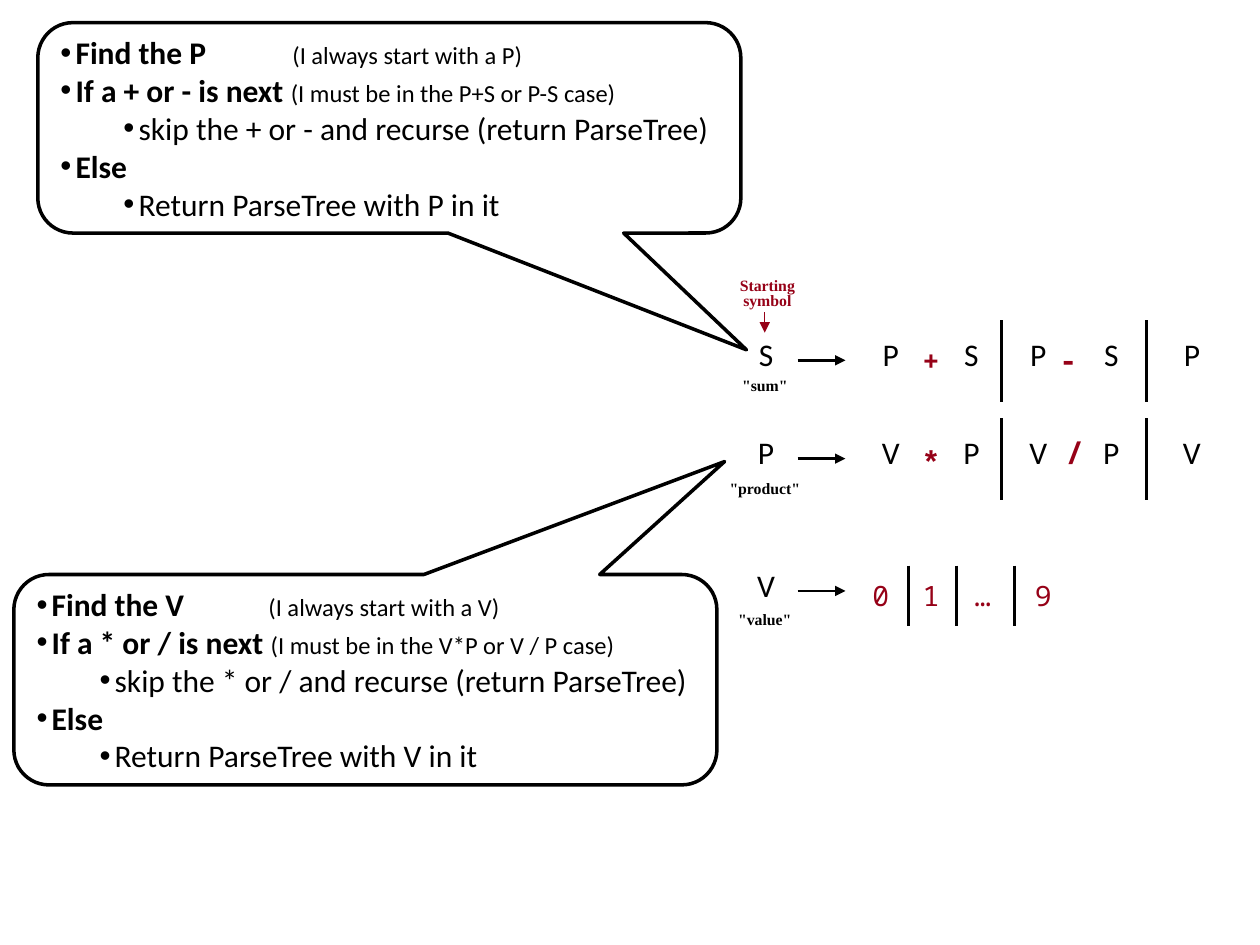
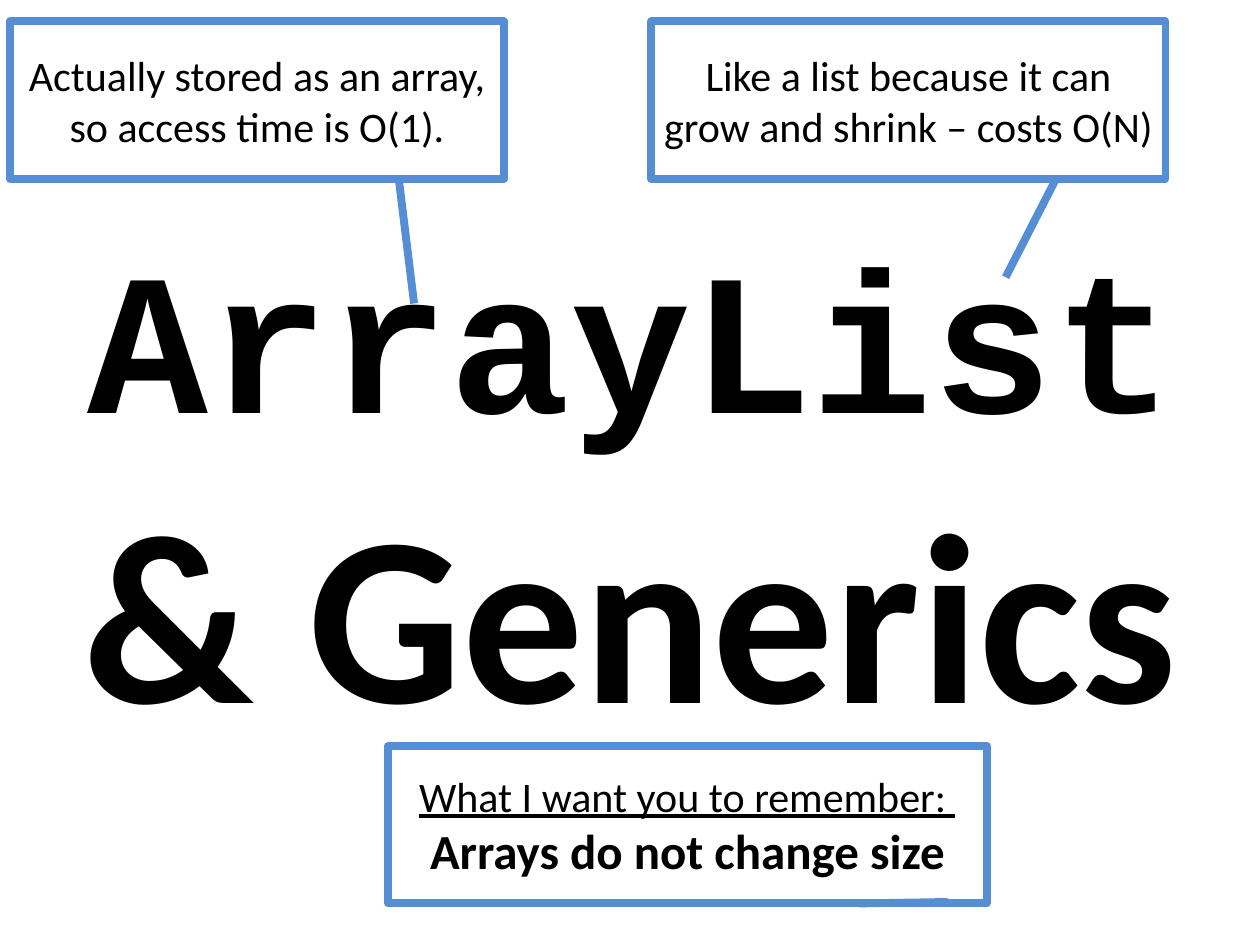
import lxml.etree
import pptx
import pptx.dml.color
import pptx.enum.shapes
import pptx.enum.text
import pptx.oxml.ns
import pptx.util

BLACK = pptx.dml.color.RGBColor(0x00, 0x00, 0x00)
WHITE = pptx.dml.color.RGBColor(0xFF, 0xFF, 0xFF)
CRIMSON = pptx.dml.color.RGBColor(0x96, 0x01, 0x17)
BLUE = pptx.dml.color.RGBColor(0x55, 0x8E, 0xD5)

SANS, MONO, CODE, SERIF = "Calibri", "Noto Sans Mono", "Courier New", "Times New Roman"
COLS, ROWS = 100, 75
SHAPE = pptx.enum.shapes.MSO_SHAPE
ALIGN = pptx.enum.text.PP_ALIGN
ANCHOR = pptx.enum.text.MSO_ANCHOR


def sub(parent, tag, **attrs):
    el = lxml.etree.SubElement(parent, pptx.oxml.ns.qn(tag))
    for key, value in attrs.items():
        el.set(key, str(value))
    return el


class Deck:
    def __init__(self):
        self.prs = pptx.Presentation()
        self.prs.slide_width = pptx.util.Inches(10)
        self.prs.slide_height = pptx.util.Inches(7.5)
        self.s = None

    def slide(self):
        self.s = self.prs.slides.add_slide(self.prs.slide_layouts[6])

    def x(self, cols):
        return round(self.prs.slide_width * cols / COLS)

    def y(self, rows):
        return round(self.prs.slide_height * rows / ROWS)

    def box(self, left, top, width, height):
        return self.x(left), self.y(top), self.x(width), self.y(height)

    def font(self, font, size=None, name=SANS, color=BLACK, bold=None, underline=None):
        font.name = name
        font.size = pptx.util.Pt(size) if size else None
        font.color.rgb = color
        font.bold = bold
        font.underline = underline

    def text(self, box, text, wrap=True, spacing=None, **style):
        tf = self.s.shapes.add_textbox(*self.box(*box)).text_frame
        tf.word_wrap = wrap
        tf.auto_size = pptx.enum.text.MSO_AUTO_SIZE.SHAPE_TO_FIT_TEXT
        p = tf.paragraphs[0]
        p.text = text
        p.alignment = ALIGN.CENTER
        p.line_spacing = spacing
        self.font(p.font, **style)

    def symbol(self, center, top, text, size=18, **style):
        self.text((center - 2, top, 4, 5.1), text, wrap=False, size=size, **style)

    def caption(self, left, top, text, color=BLACK):
        self.text((left, top, 8.4, 2.2), text, spacing=0.8,
                  size=9, name=SERIF, color=color, bold=True)

    def line(self, x1, y1, x2, y2, width=1.5, color=BLACK, arrow=False):
        cx = self.s.shapes.add_connector(
            pptx.enum.shapes.MSO_CONNECTOR.STRAIGHT,
            self.x(x1), self.y(y1), self.x(x2), self.y(y2))
        cx.line.color.rgb = color
        cx.line.width = pptx.util.Pt(width)
        if arrow:
            sub(cx.line._get_or_add_ln(), "a:tailEnd", type="triangle")
        sub(cx._element.spPr, "a:effectLst")

    def callout(self, kind, box, adjustments, color, width):
        sp = self.s.shapes.add_shape(kind, *self.box(*box))
        sp.shadow.inherit = False
        for i, value in enumerate(adjustments):
            sp.adjustments[i] = value
        sp.fill.solid()
        sp.fill.fore_color.rgb = WHITE
        sp.line.color.rgb = color
        sp.line.width = pptx.util.Pt(width)
        tf = sp.text_frame
        tf.word_wrap = True
        tf.vertical_anchor = ANCHOR.MIDDLE
        return tf

    def steps(self, box, adjustments, items):
        tf = self.callout(SHAPE.ROUNDED_RECTANGULAR_CALLOUT, box, adjustments, BLACK, 2)
        for i, (level, step, note) in enumerate(items):
            p = tf.paragraphs[0] if i == 0 else tf.add_paragraph()
            p.alignment = ALIGN.LEFT
            p.level = level
            self.bullet(p, 1.2 + 5 * level)
            self.font(p.font)
            for text, size, bold in ((step, 18, level == 0), (note, 14, False)):
                if text:
                    r = p.add_run()
                    r.text = text
                    self.font(r.font, size, bold=bold)

    def bullet(self, p, margin):
        pPr = p._p.get_or_add_pPr()
        pPr.set("marL", str(self.x(margin)))
        pPr.set("indent", str(-self.x(1.2)))
        sub(pPr, "a:buFont", typeface="Arial")
        sub(pPr, "a:buChar", char="•")
        sub(sub(pPr, "a:tabLst"), "a:tab", pos=self.x(18.4), algn="l")

    def remark(self, box, tip, *paragraphs):
        tf = self.callout(SHAPE.LINE_CALLOUT_1, box, (1, 0.787, *tip), BLUE, 4.5)
        for i, (text, style) in enumerate(paragraphs):
            p = tf.paragraphs[0] if i == 0 else tf.add_paragraph()
            p.text = text
            p.alignment = ALIGN.CENTER
            self.font(p.font, **style)

    def title(self, box, *runs):
        tf = self.s.shapes.add_textbox(*self.box(*box)).text_frame
        tf.word_wrap = True
        tf.vertical_anchor = ANCHOR.MIDDLE
        p = tf.paragraphs[0]
        p.alignment = ALIGN.CENTER
        for text, size, name in runs:
            r = p.add_run()
            r.text = text
            self.font(r.font, size, name, bold=True)


def recipe(first, plus, minus, rest, cases):
    return [
        (0, f"Find the {first}\t", f"(I always start with a {first})"),
        (0, f"If a {plus} or {minus} is next ", f"(I must be in the {cases} case)"),
        (1, f"skip the {plus} or {minus} and recurse (return ParseTree)", ""),
        (0, "Else", ""),
        (1, f"Return ParseTree with {rest} in it", ""),
    ]


def grammar_slide(d):
    d.slide()
    rules = [
        (26.1, "S", '"sum"', 29.6, "PSPSP"),
        (33.9, "P", '"product"', 37.8, "VPVPV"),
        (44.4, "V", '"value"', 48.2, ""),
    ]
    for top, head, name, name_top, body in rules:
        d.symbol(60.8, top, head)
        d.caption(56.5, name_top, name)
        d.line(63.3, top + 2.5, 67.1, top + 2.5, arrow=True)
        for center, letter in zip((70.7, 77.1, 82.4, 88.2, 94.6), body):
            d.symbol(center, top, letter)
        for bar in (79.5, 91) if body else ():
            d.line(bar, top - 0.7, bar, top + 5.8)

    operators = [
        (73.9, 26.8, "+", 16, MONO),
        (84.8, 26.5, "-", 18, CODE),
        (73.9, 34.6, "*", 18, CODE),
        (85.3, 33.9, "/", 18, MONO),
    ]
    for center, top, sign, size, name in operators:
        d.symbol(center, top, sign, size, name=name, color=CRIMSON, bold=True)
    for center, digit in zip((69.9, 73.9, 78, 82.8), "01…9"):
        d.symbol(center, 45.4, digit, 16, name=MONO, color=CRIMSON)
    for bar in (72.1, 75.9, 80.5):
        d.line(bar, 44.9, bar, 49.7)

    d.caption(56.7, 21.7, "Starting symbol", CRIMSON)
    d.line(60.7, 24.8, 60.7, 26.4, 0.75, CRIMSON, arrow=True)
    d.steps((3, 1.8, 55.8, 16.7), (0.508, 1.055, 0.167),
            recipe("P", "+", "-", "P", "P+S or P-S"))
    d.steps((1.1, 45.6, 55.8, 16.7), (0.511, -1.037, 0.167),
            recipe("V", "*", "/", "V", "V*P or V / P"))


def array_list_slide(d):
    d.slide()
    plain = {"size": 24}
    d.title((3.1, 18.3, 93.9, 36.7), ("ArrayList", 115, CODE), (" & Generics", 138, SANS))
    d.remark((51.7, 1.7, 40.8, 12.5), (1.624, 0.689),
             ("Like a list because it can grow and shrink – costs O(N)", plain))
    d.remark((0.8, 1.7, 39.2, 12.5), (1.791, 0.818),
             ("Actually stored as an array, so access time is O(1).", plain))
    d.remark((30.8, 59.2, 47.5, 12.5), (0.991, 0.935),
             ("What I want you to remember: ", {"size": 24, "underline": True}),
             ("Arrays do not change size", {"size": 28, "bold": True}))


def main():
    d = Deck()
    grammar_slide(d)
    array_list_slide(d)
    d.prs.save("out.pptx")


if __name__ == "__main__":
    main()
